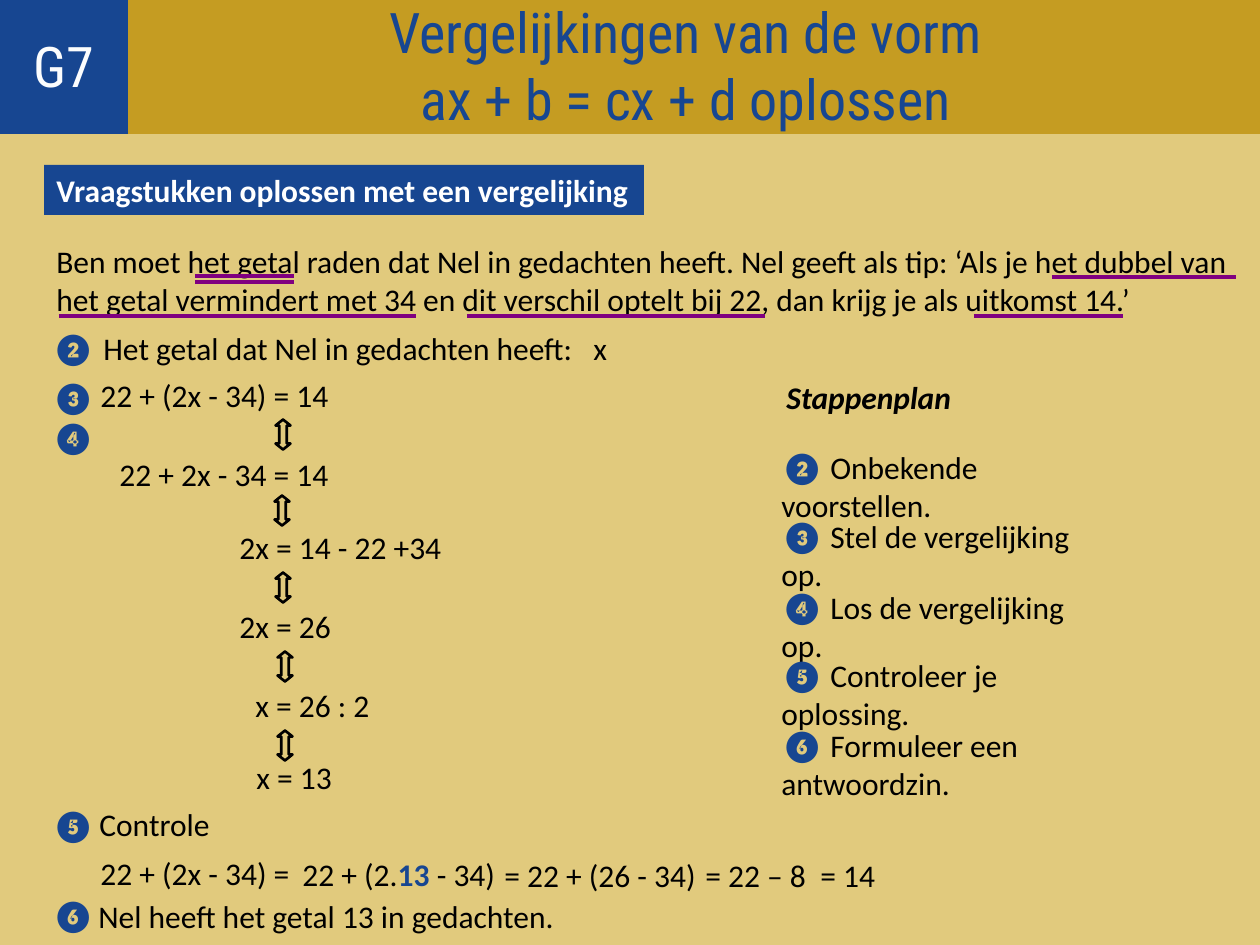
from lxml.etree import SubElement
from pptx import Presentation
from pptx.dml.color import RGBColor
from pptx.enum.shapes import MSO_CONNECTOR, MSO_SHAPE
from pptx.enum.text import MSO_ANCHOR, MSO_AUTO_SIZE, PP_ALIGN
from pptx.oxml.ns import qn
from pptx.util import Emu, Pt

BLUE = RGBColor(0x17, 0x46, 0x91)
GOLD = RGBColor(0xC5, 0x9C, 0x22)
SAND = RGBColor(0xE1, 0xCA, 0x7D)
PURPLE = RGBColor(0x80, 0x00, 0x80)
BLACK = RGBColor(0, 0, 0)
WHITE = RGBColor(0xFF, 0xFF, 0xFF)
OFF_WHITE = RGBColor(0xFC, 0xFD, 0xFE)


def px(*lengths):
    return [Emu(round(n * 914400 / 126)) for n in lengths]


def write(sp, *runs, size=18, font="Calibri", color=BLACK, bold=False,
          italic=False, align=PP_ALIGN.LEFT, anchor=MSO_ANCHOR.TOP, wrap=False):
    """Write runs into sp; a run is a text or a (text, color, bold) tuple."""
    tf = sp.text_frame
    tf.auto_size = MSO_AUTO_SIZE.NONE
    tf.word_wrap = wrap
    tf.vertical_anchor = anchor
    p = tf.paragraphs[0]
    p.alignment = align
    for i, line in enumerate(runs):
        text, c, b = line if isinstance(line, tuple) else (line, color, bold)
        for j, part in enumerate(text.split("\n")):
            if j:
                p.add_line_break()
            r = p.add_run()
            r.text = part
            r.font.size, r.font.name = Pt(size), font
            r.font.bold, r.font.italic = b, italic
            r.font.color.rgb = c


prs = Presentation()
prs.slide_width, prs.slide_height = px(1260, 945)
s = prs.slides.add_slide(prs.slide_layouts[5])
s.background.fill.solid()
s.background.fill.fore_color.rgb = SAND

# Title bar
title = s.shapes.title
title.left, title.top, title.width, title.height = px(0, -4, 1260, 138)
title.fill.solid()
title.fill.fore_color.rgb = GOLD
title.text_frame.margin_left, title.text_frame.margin_right = px(125, 13)
write(title, "Vergelijkingen van de vorm\nax + b = cx + d oplossen", size=32,
      font="Roboto Condensed", color=BLUE, align=PP_ALIGN.CENTER,
      anchor=MSO_ANCHOR.MIDDLE, wrap=True)

# Chapter badge and section heading
for box, text, style in [
    ((0, -4, 128, 138), "G7",
     dict(size=32, font="Roboto Condensed", color=OFF_WHITE,
          align=PP_ALIGN.CENTER, anchor=MSO_ANCHOR.MIDDLE, wrap=True)),
    ((44, 165, 600, 50), "Vraagstukken oplossen met een vergelijking",
     dict(color=WHITE, bold=True)),
]:
    sp = s.shapes.add_shape(MSO_SHAPE.RECTANGLE, *px(*box))
    sp.shadow.inherit = False
    sp.fill.solid()
    sp.fill.fore_color.rgb = BLUE
    sp.line.fill.background()
    write(sp, text, **style)

# Problem statement
sp = s.shapes.add_textbox(*px(44, 236, 1221, 88))
write(sp, "Ben moet het getal raden dat Nel in gedachten heeft. Nel geeft als "
      "tip: ‘Als je het dubbel van het getal vermindert met 34 en dit verschil "
      "optelt bij 22, dan krijg je als uitkomst 14.’", wrap=True)

# Underlined key phrases
for x1, x2, y in [(1052, 1236, 277), (467, 765, 316), (59, 416, 316),
                  (974, 1123, 316), (195, 294, 276), (195, 294, 282)]:
    line = s.shapes.add_connector(MSO_CONNECTOR.STRAIGHT, *px(x1, y, x2, y))
    line.line.color.rgb = PURPLE
    line.line.width = Pt(2)
    SubElement(line._element.spPr, qn("a:effectLst"))

# Step numbers beside the solution
for number, y in zip("❷❸❹❺❻", [323, 372, 412, 800, 890]):
    sp = s.shapes.add_textbox(*px(40, y, 53, 50))
    write(sp, number, color=BLUE, bold=True)

# Solution, check and answer
for x, y, w, text in [
    (91, 323, 499, "Het getal dat Nel in gedachten heeft:"),
    (581, 323, 39, "x"),
    (88, 370, 255, "22 + (2x - 34) = 14"),
    (107, 449, 236, "22 + 2x - 34 = 14"),
    (227, 522, 228, "2x = 14 - 22 +34"),
    (227, 601, 117, "2x = 26"),
    (243, 680, 140, "x = 26 : 2"),
    (244, 752, 101, "x = 13"),
    (87, 799, 136, "Controle"),
    (88, 848, 220, "22 + (2x - 34) ="),
    (492, 850, 226, "= 22 + (26 - 34)"),
    (693, 850, 126, "= 22 – 8"),
    (808, 850, 81, "= 14"),
    (86, 891, 485, "Nel heeft het getal 13 in gedachten."),
]:
    write(s.shapes.add_textbox(*px(x, y, w, 50)), text)

sp = s.shapes.add_textbox(*px(290, 849, 218, 50))
write(sp, "22 + (2.", ("13 ", BLUE, True), "- 34)")

# Equivalence arrows
for x, y in [(268, 427), (267, 503), (268, 580), (270, 659), (270, 738)]:
    arrow = s.shapes.add_shape(MSO_SHAPE.LEFT_RIGHT_ARROW, *px(x, y, 30, 15))
    arrow.rotation = 90
    arrow.adjustments[0], arrow.adjustments[1] = 0.5, 0.4
    arrow.shadow.inherit = False
    arrow.fill.background()
    arrow.line.color.rgb = BLACK
    arrow.line.width = Pt(1.5)

# Step plan
sp = s.shapes.add_textbox(*px(774, 372, 190, 50))
write(sp, "Stappenplan", bold=True, italic=True)
for number, y, w, text in [
    ("❷", 442, 368, "Onbekende voorstellen."),
    ("❸", 511, 350, "Stel de vergelijking op."),
    ("❹", 582, 344, "Los de vergelijking op."),
    ("❺", 650, 364, "Controleer je oplossing."),
    ("❻", 720, 426, "Formuleer een antwoordzin."),
]:
    sp = s.shapes.add_textbox(*px(769, y, w, 50))
    write(sp, (number, BLUE, True), " " + text, wrap=True)

prs.save("out.pptx")
